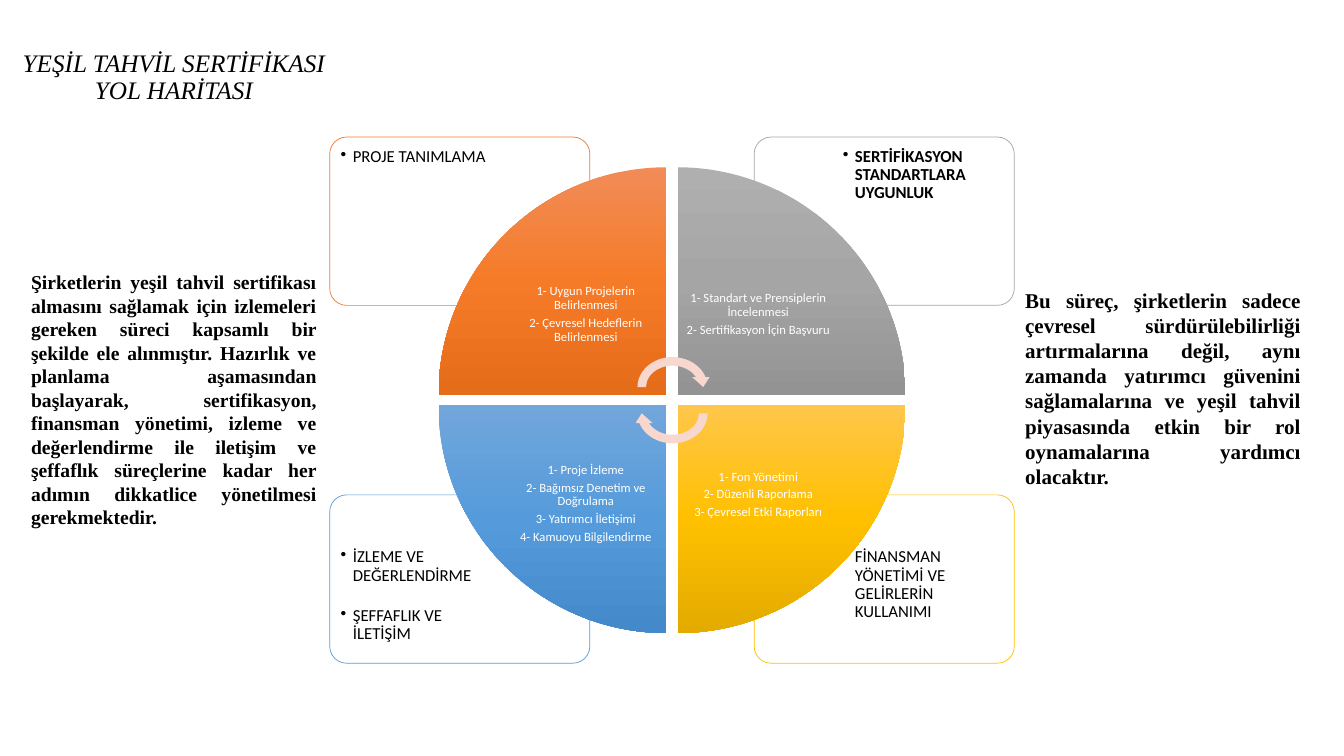
from copy import deepcopy

from lxml import etree
from pptx import Presentation
from pptx import util as u
from pptx.dml.color import RGBColor
from pptx.enum import shapes, text
from pptx.oxml.ns import qn

BLACK = RGBColor(0, 0, 0)
WHITE = RGBColor(255, 255, 255)
ORANGE = RGBColor(0xED, 0x7D, 0x31)
GRAY = RGBColor(0xA5, 0xA5, 0xA5)
GOLD = RGBColor(0xFF, 0xC0, 0x00)
BLUE = RGBColor(0x5B, 0x9B, 0xD5)
PINK = RGBColor(0xF8, 0xD7, 0xCE)
ORANGES = RGBColor(0xF1, 0x8C, 0x57), RGBColor(0xF6, 0x7B, 0x28), RGBColor(0xE5, 0x6C, 0x19)
GRAYS = RGBColor(0xAF, 0xAF, 0xAF), GRAY, RGBColor(0x93, 0x93, 0x93)
GOLDS = RGBColor(0xFF, 0xC6, 0x4B), GOLD, RGBColor(0xE3, 0xAB, 0x00)
BLUES = RGBColor(0x71, 0xA6, 0xDB), RGBColor(0x55, 0x9B, 0xDB), RGBColor(0x44, 0x8A, 0xCA)

SHAPE = shapes.MSO_SHAPE
ALIGN = text.PP_ALIGN
MID = text.MSO_ANCHOR.MIDDLE
TOP = text.MSO_ANCHOR.TOP
SERIF = "Times New Roman"
SANS = "Calibri"


def px(n):
    return u.Emu(n * 9144)


def assign(item, values):
    for key, value in values.items():
        setattr(item, key, value)


class Deck:
    def __init__(self, wide, high):
        self.show = Presentation()
        assign(self.show, {"slide_width": px(wide), "slide_height": px(high)})
        self.slide = self.show.slides.add_slide(self.show.slide_layouts[6])

    def shape(self, kind, box, fill=None, line=None, turn=0):
        item = self.slide.shapes.add_shape(kind, *map(px, box))
        item.shadow.inherit = False
        item.rotation = turn
        if fill is not None:
            item.fill.solid()
            item.fill.fore_color.rgb = fill
        if line is None:
            item.line.fill.background()
        else:
            item.line.color.rgb = line
            item.line.width = u.Pt(0.5)
        return item

    def card(self, box, color):
        self.shape(SHAPE.ROUNDED_RECTANGLE, box, WHITE, color).adjustments[0] = 0.1

    def wedge(self, box, tones, turn):
        item = self.shape(SHAPE.PIE_WEDGE, box, turn=turn)
        item.fill.gradient()
        item.fill.gradient_angle = 270
        grad = item._element.spPr.find(qn("a:gradFill"))
        grad.set("rotWithShape", "0")
        stops = grad.find(qn("a:gsLst"))
        stops.append(deepcopy(stops[-1]))
        for stop, tone, at in zip(item.fill.gradient_stops, tones, (0, 0.5, 1)):
            stop.color.rgb = tone
            stop.position = at

    def label(self, box, lines, font, form, color=BLACK, inset=(10, 5), anchor=TOP, bullet=False):
        frame = self.slide.shapes.add_textbox(*map(px, box)).text_frame
        side, edge = map(px, inset)
        assign(frame, {"word_wrap": True, "vertical_anchor": anchor,
                       "margin_left": side, "margin_right": side,
                       "margin_top": edge, "margin_bottom": edge})
        for i, line in enumerate(lines):
            para = frame.add_paragraph() if i else frame.paragraphs[0]
            para.text = line
            if bullet:
                props = para._p.get_or_add_pPr()
                props.set("marL", str(px(12)))
                props.set("indent", str(-px(12)))
                etree.SubElement(props, qn("a:buChar"), char="•")
            assign(para, form)
            for run in para.runs:
                run.font.color.rgb = color
                assign(run.font, font)


PARTS = [
    (0, 0, ORANGE, ORANGES, ["PROJE TANIMLAMA"], False, 0,
     ["1- Uygun Projelerin Belirlenmesi", "2- Çevresel Hedeflerin Belirlenmesi"]),
    (1, 0, GRAY, GRAYS, ["SERTİFİKASYON STANDARTLARA UYGUNLUK"], True, 0,
     ["1- Standart ve Prensiplerin İncelenmesi", "2- Sertifikasyon İçin Başvuru"]),
    (1, 1, GOLD, GOLDS, ["FİNANSMAN YÖNETİMİ VE GELİRLERİN KULLANIMI"], False, 9,
     ["1- Fon Yönetimi", "2- Düzenli Raporlama", "3- Çevresel Etki Raporları"]),
    (0, 1, BLUE, BLUES, ["İZLEME VE DEĞERLENDİRME", "ŞEFFAFLIK VE İLETİŞİM"], False, 18,
     ["1- Proje İzleme", "2- Bağımsız Denetim ve Doğrulama",
      "3- Yatırımcı İletişimi", "4- Kamuoyu Bilgilendirme"]),
]
INTRO = ("Şirketlerin yeşil tahvil sertifikası almasını sağlamak için izlemeleri gereken süreci "
         "kapsamlı bir şekilde ele alınmıştır. Hazırlık ve planlama aşamasından başlayarak, "
         "sertifikasyon, finansman yönetimi, izleme ve değerlendirme ile iletişim ve şeffaflık "
         "süreçlerine kadar her adımın dikkatlice yönetilmesi gerekmektedir.")
CLOSE = ("Bu süreç, şirketlerin sadece çevresel sürdürülebilirliği artırmalarına değil, aynı "
         "zamanda yatırımcı güvenini sağlamalarına ve yeşil tahvil piyasasında etkin bir rol "
         "oynamalarına yardımcı olacaktır.")


def main():
    deck = Deck(1333, 750)
    deck.label((0, 40, 345, 74), ["YEŞİL TAHVİL SERTİFİKASI\vYOL HARİTASI"],
               {"name": SERIF, "size": u.Pt(18), "italic": True},
               {"alignment": ALIGN.CENTER, "line_spacing": 0.9}, anchor=MID)

    for col, row, color, tones, heads, bold, shift, steps in PARTS:
        deck.card((327 + 421 * col, 136 + 355 * row, 258, 167), color)
        deck.label((331 + 498 * col, 140 + 397 * row, 173, 118), heads,
                   {"name": SANS, "size": u.Pt(12), "bold": bold},
                   {"line_spacing": 0.9, "space_after": u.Pt(16)}, inset=(7, 7), bullet=True)

    for i, (col, row, color, tones, heads, bold, shift, steps) in enumerate(PARTS):
        deck.wedge((435 + 237 * col, 166 + 236 * row, 226, 226), tones, 90 * i)
        deck.label((501 + 171 * col, 232 + 170 * row + shift, 160, 160), steps,
                   {"name": SANS, "size": u.Pt(9)},
                   {"alignment": ALIGN.CENTER, "line_spacing": 0.9, "space_after": u.Pt(3)},
                   WHITE, (7, 7), MID)

    for top, turn in ((350, 0), (376, 180)):
        deck.shape(SHAPE.CIRCULAR_ARROW, (628, top, 78, 68), PINK, turn=turn)

    for box, body, size in (((21, 263, 303, 269), INTRO, 14), ((1007, 280, 293, 212), CLOSE, 15)):
        deck.label(box, [body], {"name": SERIF, "size": u.Pt(size), "bold": True},
                   {"alignment": ALIGN.JUSTIFY})
    deck.show.save("out.pptx")


if __name__ == "__main__":
    main()
